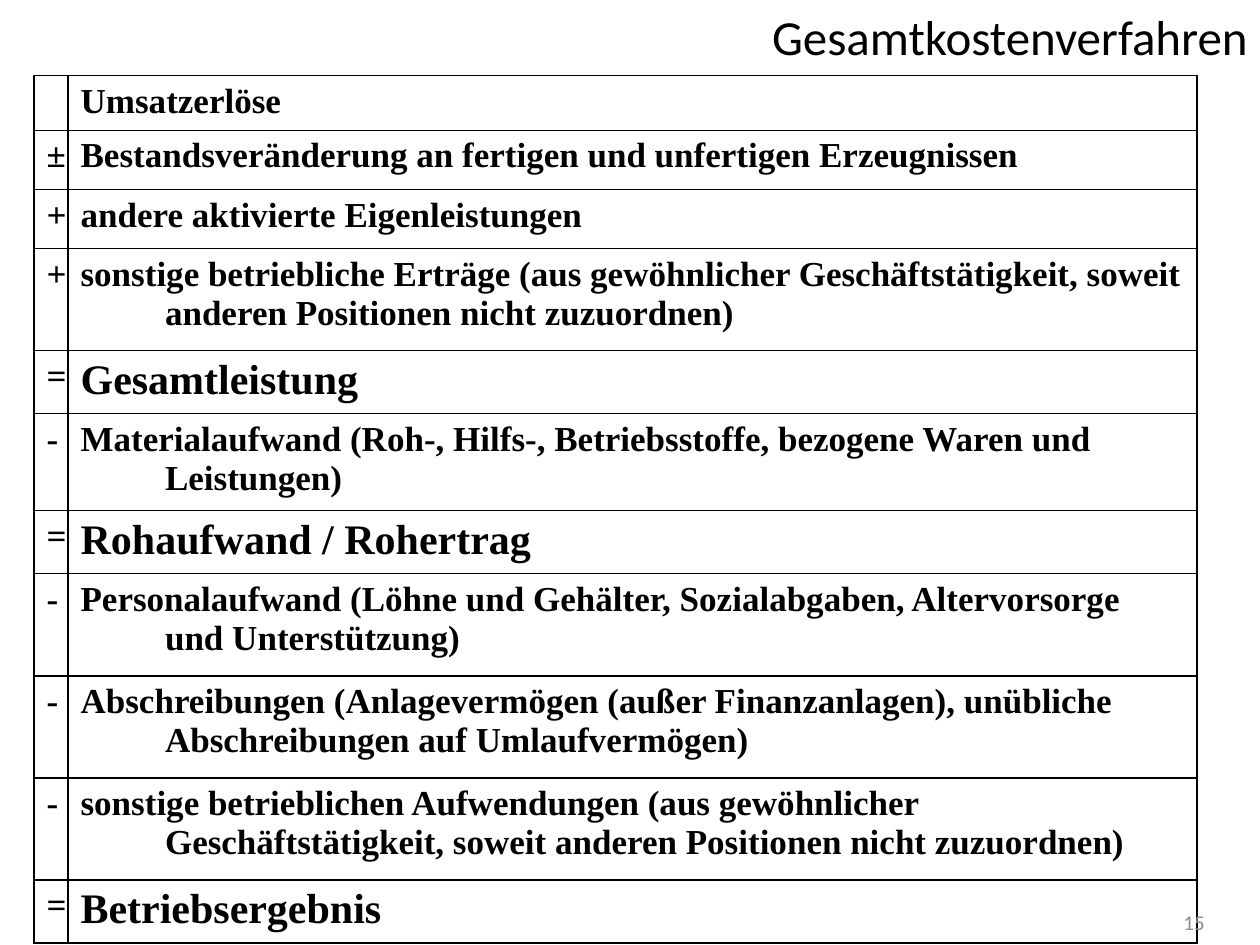
"""Build the slide on the total cost method as a ruled two-column table."""
from dataclasses import dataclass

from lxml import etree
from pptx import Presentation
from pptx.dml.color import RGBColor
from pptx.enum.text import MSO_ANCHOR, PP_ALIGN
from pptx.oxml.ns import qn
from pptx.slide import Slide
from pptx.table import _Cell
from pptx.text.text import _Paragraph
from pptx.util import Inches, Pt

LEFT, CENTER, RIGHT = PP_ALIGN.LEFT, PP_ALIGN.CENTER, PP_ALIGN.RIGHT
MIDDLE = MSO_ANCHOR.MIDDLE


@dataclass(frozen=True)
class Theme:
    heading_font: str = "Calibri"
    table_font: str = "Times New Roman"
    ink: str = "000000"
    paper: str = "FFFFFF"
    muted: str = "8C8C8C"
    title_size: int = 28
    total_size: int = 24
    item_size: int = 20
    number_size: int = 12
    rule_width: int = 1
    hanging: float = 0.67


@dataclass(frozen=True)
class Position:
    sign: str
    label: str
    height: float
    is_total: bool = False


@dataclass(frozen=True)
class Caption:
    text: str
    left: float
    top: float
    width: float
    height: float
    size: int
    color: str


THEME = Theme()
COLUMN_WIDTHS = (0.27, 8.96)
TABLE_LEFT, TABLE_TOP = 0.27, 0.6

CAPTIONS = (
    Caption("Gesamtkostenverfahren", 1, 0, 9, 0.57, THEME.title_size, THEME.ink),
    Caption("15", 7.33, 7.12, 2.33, 0.4, THEME.number_size, THEME.muted),
)

POSITIONS = (
    Position("", "Umsatzerlöse", 0.43),
    Position("±", "Bestandsveränderung an fertigen und unfertigen Erzeugnissen", 0.47),
    Position("+", "andere aktivierte Eigenleistungen", 0.47),
    Position("+", "sonstige betriebliche Erträge (aus gewöhnlicher Geschäftstätigkeit, "
                  "soweit anderen Positionen nicht zuzuordnen)", 0.81),
    Position("=", "Gesamtleistung", 0.5, True),
    Position("-", "Materialaufwand (Roh-, Hilfs-, Betriebsstoffe, bezogene Waren "
                  "und Leistungen)", 0.77),
    Position("=", "Rohaufwand / Rohertrag", 0.5, True),
    Position("-", "Personalaufwand (Löhne und Gehälter, Sozialabgaben, Altervorsorge "
                  "und Unterstützung)", 0.81),
    Position("-", "Abschreibungen (Anlagevermögen (außer Finanzanlagen), unübliche "
                  "Abschreibungen auf Umlaufvermögen)", 0.81),
    Position("-", "sonstige betrieblichen Aufwendungen (aus gewöhnlicher "
                  "Geschäftstätigkeit, soweit anderen Positionen nicht zuzuordnen)", 0.81),
    Position("=", "Betriebsergebnis", 0.5, True),
)


def write(paragraph: _Paragraph, text: str, align: PP_ALIGN, color: str, **font_format) -> None:
    paragraph.alignment = align
    run = paragraph.add_run()
    run.text = text
    run.font.color.rgb = RGBColor.from_string(color)
    for attribute, value in font_format.items():
        setattr(run.font, attribute, value)


def draw_caption(slide: Slide, caption: Caption) -> None:
    bounds = (caption.left, caption.top, caption.width, caption.height)
    frame = slide.shapes.add_textbox(*map(Inches, bounds)).text_frame
    frame.word_wrap = True
    frame.vertical_anchor = MIDDLE
    write(frame.paragraphs[0], caption.text, RIGHT, caption.color,
          name=THEME.heading_font, size=Pt(caption.size))


def rule_cell(cell: _Cell) -> None:
    properties = cell._tc.get_or_add_tcPr()
    for side in ("a:lnL", "a:lnR", "a:lnT", "a:lnB"):
        line = etree.SubElement(properties, qn(side), w=str(Pt(THEME.rule_width)))
        fill = etree.SubElement(line, qn("a:solidFill"))
        etree.SubElement(fill, qn("a:srgbClr"), val=THEME.ink)
    cell.fill.solid()
    cell.fill.fore_color.rgb = RGBColor.from_string(THEME.paper)


def fill_cell(cell: _Cell, text: str, align: PP_ALIGN, size: int) -> None:
    rule_cell(cell)
    if not text:
        return
    paragraph = cell.text_frame.paragraphs[0]
    write(paragraph, text, align, THEME.ink,
          name=THEME.table_font, size=Pt(size), bold=True)
    indents = {"marL": THEME.hanging, "indent": -THEME.hanging}
    for attribute, value in indents.items():
        paragraph._p.get_or_add_pPr().set(attribute, str(Inches(value)))


def draw_statement(slide: Slide) -> None:
    bounds = (TABLE_LEFT, TABLE_TOP, sum(COLUMN_WIDTHS), sum(p.height for p in POSITIONS))
    statement = slide.shapes.add_table(
        len(POSITIONS), len(COLUMN_WIDTHS), *map(Inches, bounds)).table
    for option in ("first_row", "horz_banding"):
        setattr(statement, option, False)
    for column, width in zip(statement.columns, COLUMN_WIDTHS):
        column.width = Inches(width)
    for row, position in zip(statement.rows, POSITIONS):
        row.height = Inches(position.height)
        sign_cell, label_cell = row.cells
        label_size = THEME.total_size if position.is_total else THEME.item_size
        fill_cell(sign_cell, position.sign, CENTER, THEME.item_size)
        fill_cell(label_cell, position.label, LEFT, label_size)


def main() -> None:
    presentation = Presentation()
    presentation.slide_width, presentation.slide_height = Inches(10), Inches(7.5)
    slide = presentation.slides.add_slide(presentation.slide_layouts[6])
    title, page_number = CAPTIONS
    draw_caption(slide, title)
    draw_statement(slide)
    draw_caption(slide, page_number)
    presentation.save("out.pptx")


if __name__ == "__main__":
    main()
